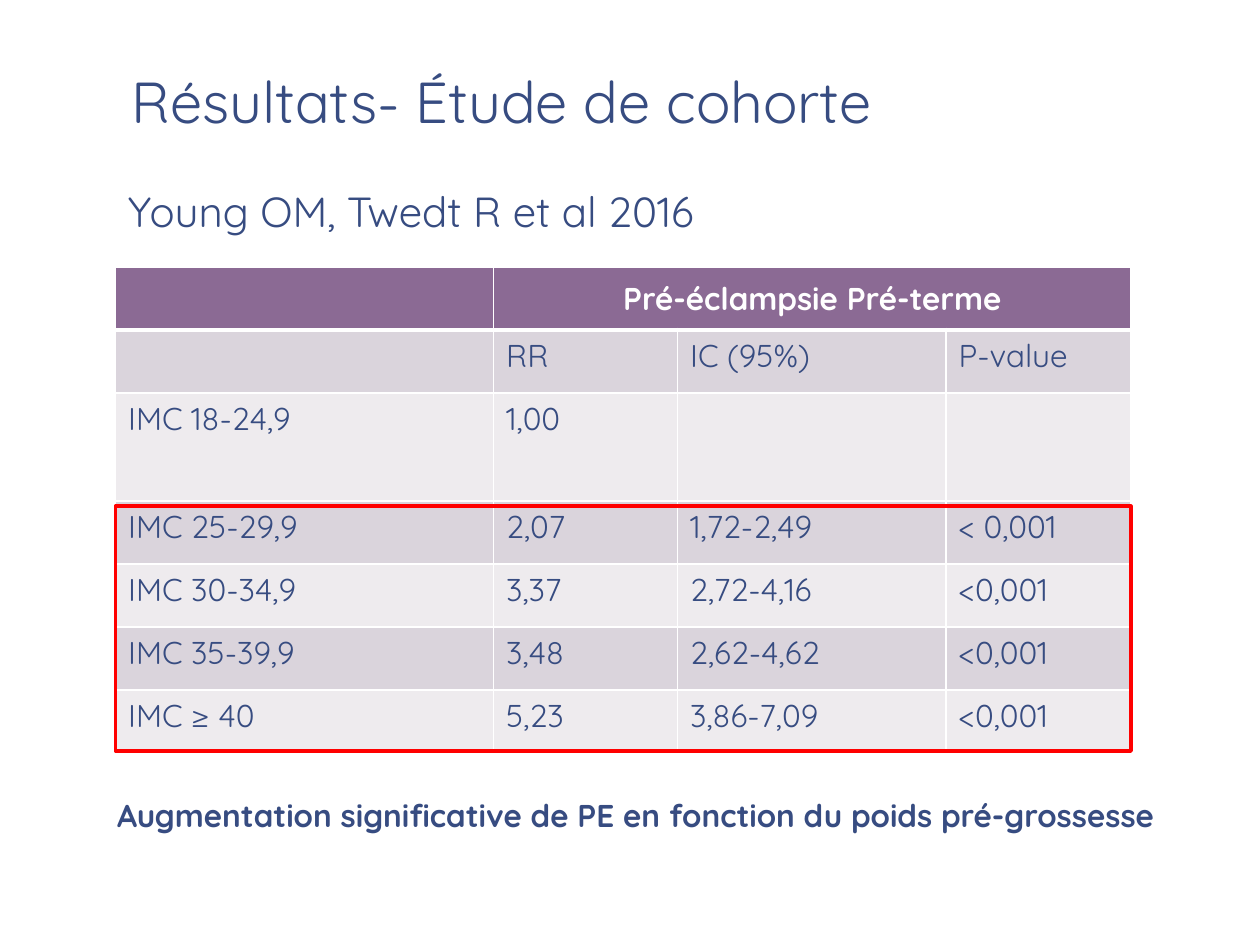
import pptx
import pptx.util
import pptx.dml.color
import pptx.enum.shapes
import pptx.enum.text
import pptx.oxml.ns
from lxml import etree

Cm = pptx.util.Cm
Pt = pptx.util.Pt
RGBColor = pptx.dml.color.RGBColor
ALIGN = pptx.enum.text.PP_ALIGN
ANCHOR = pptx.enum.text.MSO_ANCHOR

FONT = "Quicksand"
NAVY = RGBColor(0x37, 0x4C, 0x81)
PURPLE = RGBColor(0x8B, 0x6A, 0x94)
DARK_BAND = RGBColor(0xDA, 0xD4, 0xDC)
LIGHT_BAND = RGBColor(0xEE, 0xEB, 0xEE)
WHITE = RGBColor(0xFF, 0xFF, 0xFF)
RED = RGBColor(0xFF, 0x00, 0x00)

TABLE_LEFT, TABLE_TOP = 2.33, 5.38
COLUMN_WIDTHS = [7.62, 3.71, 5.41, 3.73]
ROW_HEIGHTS = [1.27, 1.27, 2.18, 1.27, 1.27, 1.27, 1.27]
RESULTS = [
    ["", "Pré-éclampsie Pré-terme", "", ""],
    ["", "RR", "IC (95%)", "P-value"],
    ["IMC 18-24,9", "1,00", "", ""],
    ["IMC 25-29,9", "2,07", "1,72-2,49", "< 0,001"],
    ["IMC 30-34,9", "3,37", "2,72-4,16", "<0,001"],
    ["IMC 35-39,9", "3,48", "2,62-4,62", "<0,001"],
    ["IMC ≥ 40", "5,23", "3,86-7,09", "<0,001"],
]


def style_paragraph(paragraph, size, color=NAVY, bold=False):
    font = paragraph.font
    font.name = FONT
    font.size = Pt(size)
    font.bold = bold
    font.color.rgb = color


def place_title(slide, text):
    title = slide.shapes.title
    title.left, title.top, title.width, title.height = Cm(2.33), Cm(0.25), Cm(21.16), Cm(3.89)
    frame = title.text_frame
    frame.auto_size = pptx.enum.text.MSO_AUTO_SIZE.NONE
    frame.vertical_anchor = ANCHOR.BOTTOM
    frame.margin_left = frame.margin_right = Cm(0.33)
    frame.margin_top = Cm(0.18)
    frame.margin_bottom = Cm(1.42)
    frame.text = text
    paragraph = frame.paragraphs[0]
    paragraph.alignment = ALIGN.LEFT
    paragraph.line_spacing = 0.85
    style_paragraph(paragraph, 33)


def add_text(slide, text, left, top, width, height, size, bold=False):
    frame = slide.shapes.add_textbox(Cm(left), Cm(top), Cm(width), Cm(height)).text_frame
    frame.word_wrap = True
    frame.text = text
    style_paragraph(frame.paragraphs[0], size, bold=bold)


def set_borders(cell, top, bottom):
    """Draw white cell borders; top and bottom are widths in points."""
    properties = cell._tc.get_or_add_tcPr()
    for side, width in (("L", 1), ("R", 1), ("T", top), ("B", bottom)):
        line = etree.SubElement(properties, pptx.oxml.ns.qn(f"a:ln{side}"), w=str(Pt(width)))
        fill = etree.SubElement(line, pptx.oxml.ns.qn("a:solidFill"))
        etree.SubElement(fill, pptx.oxml.ns.qn("a:srgbClr"), val=str(WHITE))


def fill_cell(cell, text, row):
    is_header = row == 0
    set_borders(cell, top=3 if row == 1 else 1, bottom=3 if is_header else 1)
    cell.fill.solid()
    if is_header:
        cell.fill.fore_color.rgb = PURPLE
        cell.vertical_anchor = ANCHOR.MIDDLE
    else:
        cell.fill.fore_color.rgb = DARK_BAND if row % 2 else LIGHT_BAND
    cell.text = text
    paragraph = cell.text_frame.paragraphs[0]
    paragraph.alignment = ALIGN.CENTER if is_header else ALIGN.LEFT
    style_paragraph(paragraph, 18, WHITE if is_header else NAVY, is_header)


def add_results_table(slide):
    table = slide.shapes.add_table(
        len(ROW_HEIGHTS), len(COLUMN_WIDTHS), Cm(TABLE_LEFT), Cm(TABLE_TOP),
        Cm(sum(COLUMN_WIDTHS)), Cm(sum(ROW_HEIGHTS))).table
    for column, width in zip(table.columns, COLUMN_WIDTHS):
        column.width = Cm(width)
    for row, height in zip(table.rows, ROW_HEIGHTS):
        row.height = Cm(height)
    for row, texts in enumerate(RESULTS):
        for column, text in enumerate(texts):
            fill_cell(table.cell(row, column), text, row)
    table.cell(0, 1).merge(table.cell(0, 3))


def add_highlight(slide):
    """Frame the rows of raised body mass index."""
    frame = slide.shapes.add_shape(
        pptx.enum.shapes.MSO_SHAPE.RECTANGLE,
        Cm(TABLE_LEFT), Cm(10.21), Cm(sum(COLUMN_WIDTHS)), Cm(4.93))
    frame.shadow.inherit = False
    frame.fill.background()
    frame.line.color.rgb = RED
    frame.line.width = Pt(2.25)


def main():
    presentation = pptx.Presentation()
    presentation.slide_width = Cm(25.4)
    presentation.slide_height = Cm(19.05)
    slide = presentation.slides.add_slide(presentation.slide_layouts.get_by_name("Title Only"))
    place_title(slide, "Résultats- Étude de cohorte")
    add_text(slide, "Augmentation significative de PE en fonction du poids pré-grossesse",
             2.11, 15.93, 21.62, 1.02, 18, bold=True)
    add_results_table(slide)
    add_highlight(slide)
    add_text(slide, "Young OM, Twedt R et al 2016", 2.33, 3.61, 15.93, 1.27, 24)
    presentation.save("out.pptx")


if __name__ == "__main__":
    main()
